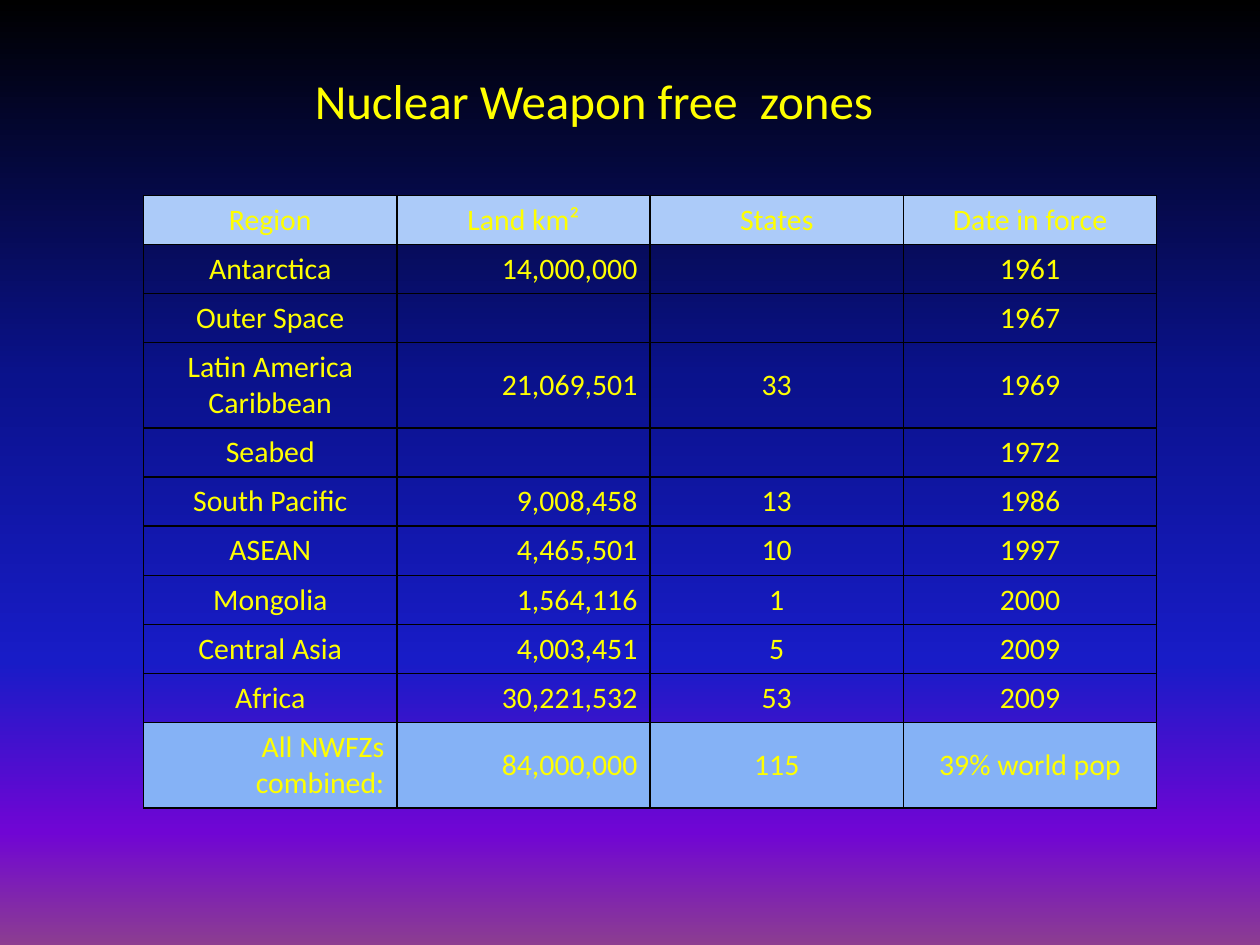
from dataclasses import dataclass

from lxml import etree
from pptx import Presentation
from pptx.dml.color import RGBColor
from pptx.enum.text import MSO_ANCHOR, PP_ALIGN
from pptx.oxml.ns import qn
from pptx.slide import Slide
from pptx.table import _Cell
from pptx.text.text import _Paragraph
from pptx.util import Inches, Pt

CENTER, LEFT, RIGHT = PP_ALIGN.CENTER, PP_ALIGN.LEFT, PP_ALIGN.RIGHT
MIDDLE = MSO_ANCHOR.MIDDLE
FONT = "Calibri"
COLORS = {"text": "FFFF00", "border": "000000", "header": "ACCBF9", "total": "85B2F6"}
BACKGROUND_STOPS = {0: "000000", 40: "0A128C", 70: "181CC7", 88: "7005D4", 100: "8C3D91"}
COLUMN_WIDTH, ROW_HEIGHT, TALL_ROW_HEIGHT = 2.01, 0.39, 0.67
BORDER_SIDES = ("a:lnL", "a:lnR", "a:lnT", "a:lnB")


@dataclass(frozen=True)
class ZoneRow:
    region: str
    land: str
    states: str
    date: str
    height: float = ROW_HEIGHT
    fill: str = ""
    alignments: tuple = (CENTER, RIGHT, CENTER, CENTER)


ZONES = [
    ZoneRow("Region", "Land km²", "States", "Date in force", fill="header", alignments=(CENTER,) * 4),
    ZoneRow("Antarctica", "14,000,000", "", "1961"),
    ZoneRow("Outer Space", "", "", "1967"),
    ZoneRow("Latin America\nCaribbean", "21,069,501", "33", "1969", height=TALL_ROW_HEIGHT),
    ZoneRow("Seabed", "", "", "1972"),
    ZoneRow("South Pacific", "9,008,458", "13", "1986"),
    ZoneRow("ASEAN", "4,465,501", "10", "1997"),
    ZoneRow("Mongolia", "1,564,116", "1", "2000"),
    ZoneRow("Central Asia", "4,003,451", "5", "2009"),
    ZoneRow("Africa", "30,221,532", "53", "2009"),
    ZoneRow("All NWFZs combined:", "84,000,000", "115", "39% world pop",
            height=TALL_ROW_HEIGHT, fill="total", alignments=(RIGHT, RIGHT, CENTER, CENTER)),
]


def write_text(paragraph: _Paragraph, text: str, *, size: int, alignment: PP_ALIGN) -> None:
    """Put formatted text into a paragraph, keeping the size when it is empty."""
    paragraph.text = text
    paragraph.alignment = alignment
    for run in paragraph.runs:
        run.font.name = FONT
        run.font.size = Pt(size)
        run.font.color.rgb = RGBColor.from_string(COLORS["text"])
    if not text:
        etree.SubElement(paragraph._p, qn("a:endParaRPr"), sz=str(size * 100))


def add_color(parent: etree._Element, color: str) -> None:
    """Append an RGB colour element."""
    etree.SubElement(parent, qn("a:srgbClr"), val=color)


def paint_background(slide: Slide) -> None:
    """Fill the slide background with a top-to-bottom gradient."""
    fill = slide.background.fill
    fill.gradient()
    fill.gradient_angle = 270
    stops = slide._element.find(".//" + qn("a:gsLst"))
    for stop in list(stops):
        stops.remove(stop)
    for position, color in BACKGROUND_STOPS.items():
        add_color(etree.SubElement(stops, qn("a:gs"), pos=str(position * 1000)), color)


def format_cell(cell: _Cell, fill: str) -> None:
    """Set the borders, fill and anchor of a table cell."""
    properties = cell._tc.get_or_add_tcPr()
    for side in BORDER_SIDES:
        line = etree.SubElement(properties, qn(side), w=str(Pt(1)))
        add_color(etree.SubElement(line, qn("a:solidFill")), COLORS["border"])
    cell.vertical_anchor = MIDDLE
    if fill:
        cell.fill.solid()
        cell.fill.fore_color.rgb = RGBColor.from_string(COLORS[fill])
    else:
        cell.fill.background()


def add_zone_table(slide: Slide, zones: list[ZoneRow]) -> None:
    """Add the table of zones."""
    height = sum(zone.height for zone in zones)
    table = slide.shapes.add_table(len(zones), 4, Inches(1.14), Inches(1.55),
                                   Inches(4 * COLUMN_WIDTH), Inches(height)).table
    table.first_row = table.horz_banding = False
    for column in table.columns:
        column.width = Inches(COLUMN_WIDTH)
    for row, zone in zip(table.rows, zones):
        row.height = Inches(zone.height)
        texts = (zone.region, zone.land, zone.states, zone.date)
        for cell, text, alignment in zip(row.cells, texts, zone.alignments):
            format_cell(cell, zone.fill)
            write_text(cell.text_frame.paragraphs[0], text, size=17, alignment=alignment)


def add_title(slide: Slide, text: str) -> None:
    """Add the slide title."""
    shape = slide.shapes.add_textbox(Inches(2.4), Inches(0.51), Inches(5.2), Inches(0.57))
    shape.text_frame.word_wrap = True
    write_text(shape.text_frame.paragraphs[0], text, size=28, alignment=LEFT)


def main() -> None:
    """Build and save the presentation."""
    presentation = Presentation()
    presentation.slide_width, presentation.slide_height = Inches(10), Inches(7.5)
    slide = presentation.slides.add_slide(presentation.slide_layouts[6])
    paint_background(slide)
    add_zone_table(slide, ZONES)
    add_title(slide, "Nuclear Weapon free  zones")
    presentation.save("out.pptx")


if __name__ == "__main__":
    main()
